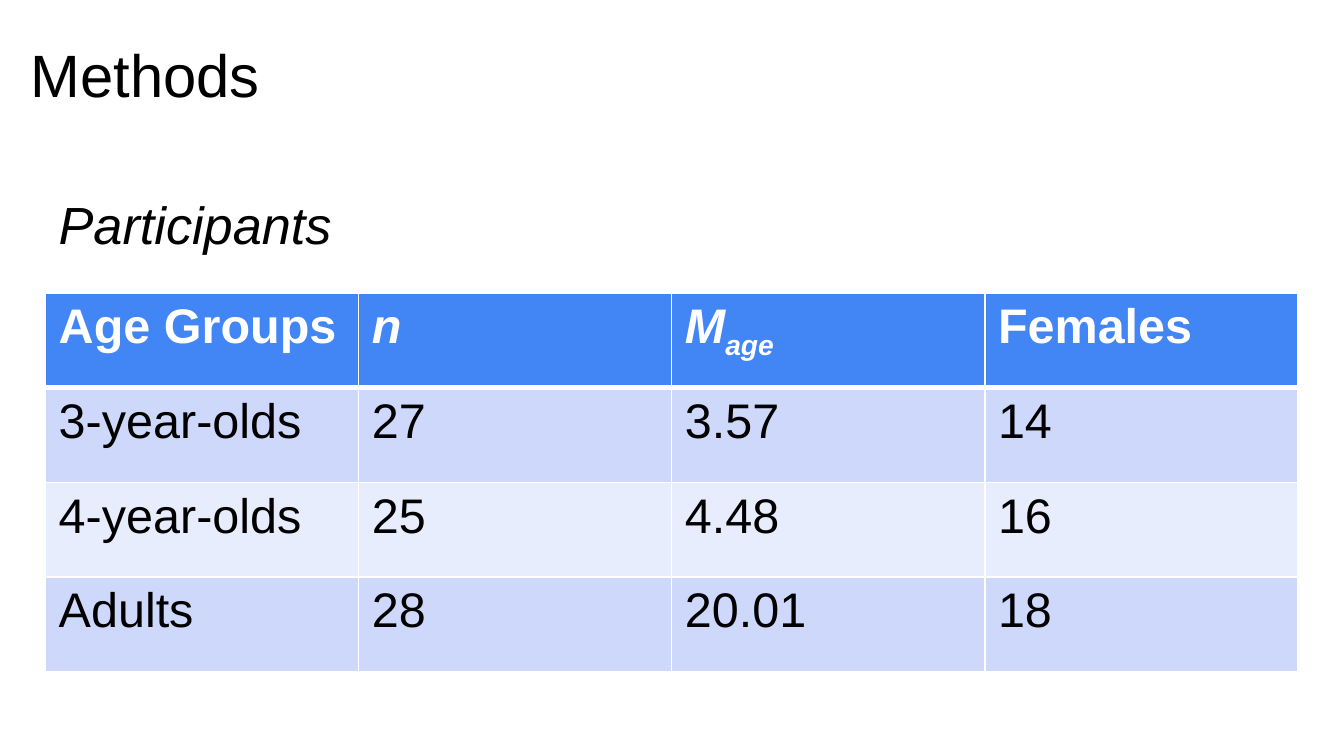
from dataclasses import dataclass

from lxml.etree import SubElement
from pptx import Presentation
from pptx.dml.color import RGBColor
from pptx.enum.text import MSO_ANCHOR, MSO_AUTO_SIZE, PP_ALIGN
from pptx.oxml.ns import qn
from pptx.util import Cm, Pt


@dataclass(frozen=True)
class Theme:
    font: str = "Arial"
    ink: str = "000000"
    paper: str = "FFFFFF"
    head: str = "4285F4"
    bands: tuple = ("CDD8FB", "E8EDFD")
    title: int = 32
    lead: int = 28
    cell: int = 26
    rule: int = 1
    heavy: int = 3


@dataclass(frozen=True)
class Box:
    """A region of the slide, in centimetres."""
    left: float
    top: float
    width: float
    height: float

    def place(self):
        return Cm(self.left), Cm(self.top), Cm(self.width), Cm(self.height)


THEME = Theme()
HEADS = [
    [("Age Groups", "")],
    [("n", "i")],
    [("M", "i"), ("age", "is")],
    [("Females", "")],
]
ROWS = [
    ["3-year-olds", "27", "3.57", "14"],
    ["4-year-olds", "25", "4.48", "16"],
    ["Adults", "28", "20.01", "18"],
]


def add_run(para, text, size, color, style=""):
    """Style letters: b bold, i italic, s subscript."""
    run = para.add_run()
    run.text = text
    font = run.font
    font.name, font.size = THEME.font, Pt(size)
    font.bold, font.italic = "b" in style, "i" in style
    font.color.rgb = RGBColor.from_string(color)
    if "s" in style:
        run._r.get_or_add_rPr().set("baseline", "-25000")


def fill_holder(shape, box, text, size, style="", space=1.0):
    """Move a placeholder to its box and give it one plain line."""
    shape.left, shape.top, shape.width, shape.height = box.place()
    frame = shape.text_frame
    frame.word_wrap = True
    frame.auto_size = MSO_AUTO_SIZE.NONE
    frame.vertical_anchor = MSO_ANCHOR.TOP
    frame.margin_left = frame.margin_right = Cm(0.25)
    frame.margin_top = frame.margin_bottom = Cm(0.25)
    para = frame.paragraphs[0]
    para.alignment = PP_ALIGN.LEFT
    para.line_spacing = space
    para.space_before = Pt(0)
    # No bullet and no hanging indent
    props = para._p.get_or_add_pPr()
    props.set("marL", "0")
    props.set("indent", "0")
    SubElement(props, qn("a:buNone"))
    add_run(para, text, size, THEME.ink, style)


def add_rules(cell, top, bottom):
    """Draw the four borders of a cell."""
    props = cell._tc.get_or_add_tcPr()
    sides = {"L": THEME.rule, "R": THEME.rule, "T": top, "B": bottom}
    for side, width in sides.items():
        line = SubElement(props, qn(f"a:ln{side}"), w=str(Pt(width)))
        fill = SubElement(line, qn("a:solidFill"))
        SubElement(fill, qn("a:srgbClr"), val=THEME.paper)


def fill_cell(cell, runs, row):
    head = row == 0
    add_rules(cell,
              top=THEME.heavy if row == 1 else THEME.rule,
              bottom=THEME.heavy if head else THEME.rule)
    shade = THEME.head if head else THEME.bands[(row - 1) % 2]
    cell.fill.solid()
    cell.fill.fore_color.rgb = RGBColor.from_string(shade)
    cell.margin_left = cell.margin_right = Cm(0.25)
    cell.margin_top = cell.margin_bottom = Cm(0.13)
    para = cell.text_frame.paragraphs[0]
    for text, style in runs:
        add_run(para, text, THEME.cell, THEME.paper if head else THEME.ink,
                style + ("b" if head else ""))


def add_groups(slide, box):
    """Table of age groups, with equal columns and rows."""
    grid = [HEADS] + [[[(text, "")] for text in row] for row in ROWS]
    table = slide.shapes.add_table(len(grid), len(HEADS), *box.place()).table
    for col in table.columns:
        col.width = Cm(box.width / len(HEADS))
    for row in table.rows:
        row.height = Cm(box.height / len(grid))
    for r, line in enumerate(grid):
        for c, runs in enumerate(line):
            fill_cell(table.cell(r, c), runs, r)


def add_methods(deck, box):
    """Methods slide: title, lead line and table."""
    slide = deck.slides.add_slide(deck.slide_layouts[1])
    # Title
    fill_holder(slide.shapes.title,
                Box(box.left + 0.33, box.top + 0.46, box.width - 1.73, 1.6),
                "Methods", THEME.title)
    # Lead line and table share their edges
    body = Box(box.left + 0.86, box.top + 3.2, box.width - 1.73, 9.5)
    fill_holder(slide.placeholders[1], body,
                "Participants", THEME.lead, "i", 1.15)
    add_groups(slide, Box(body.left, body.top + 2.34,
                          body.width, body.height - 2.34))


def main():
    deck = Presentation()
    page = Box(0, 0, 25.4, 14.29)
    deck.slide_width, deck.slide_height = Cm(page.width), Cm(page.height)
    add_methods(deck, page)
    deck.save("out.pptx")


if __name__ == "__main__":
    main()
